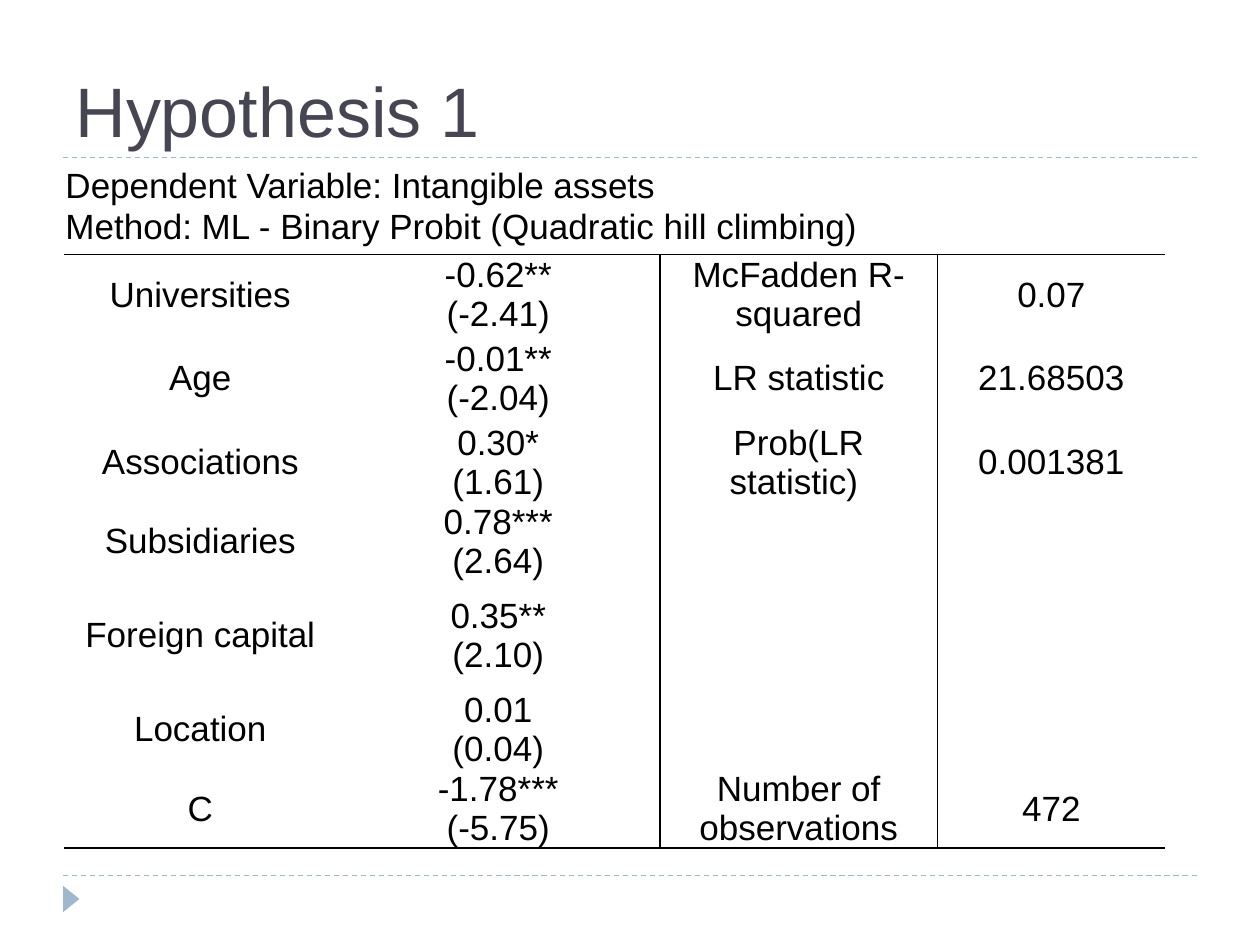
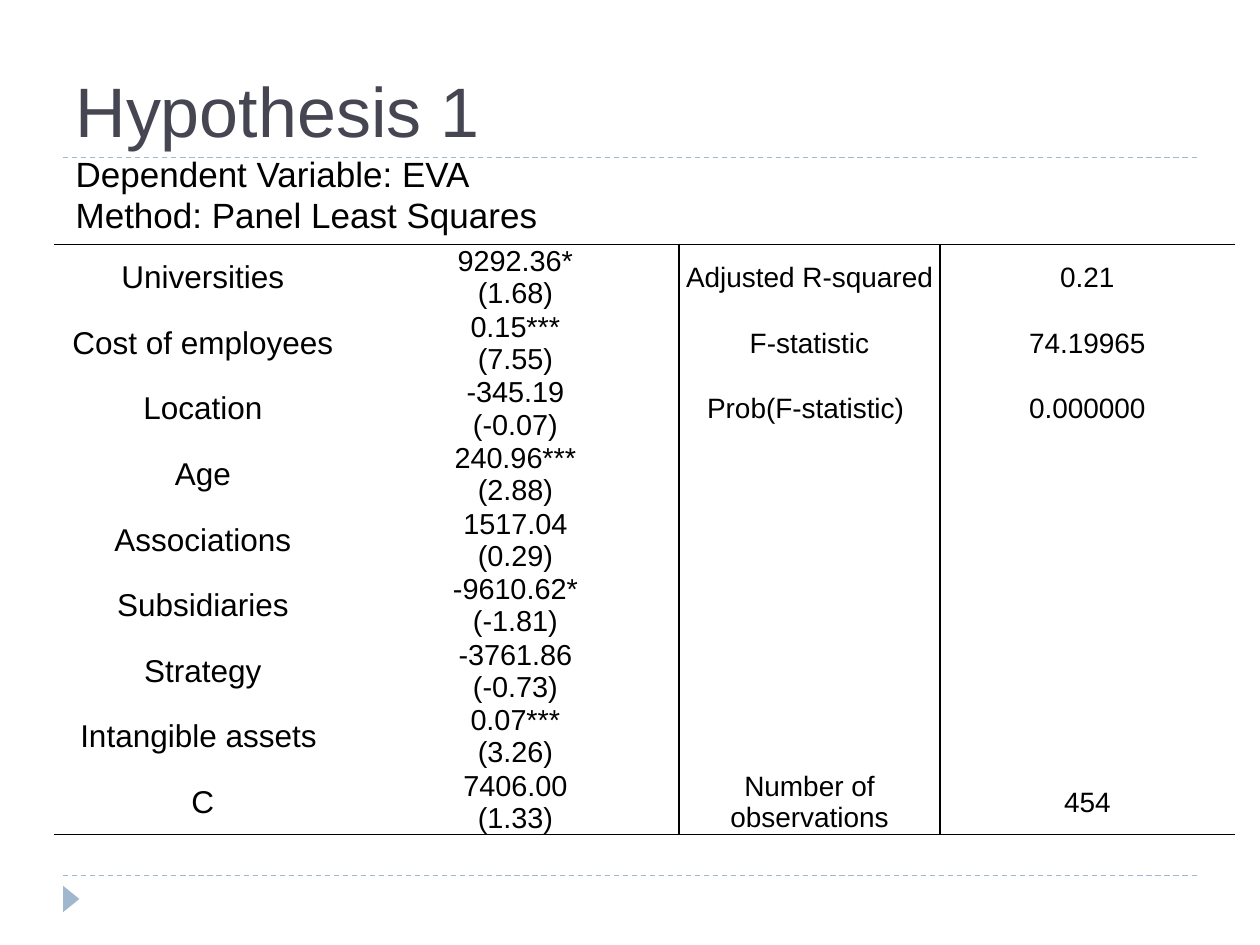
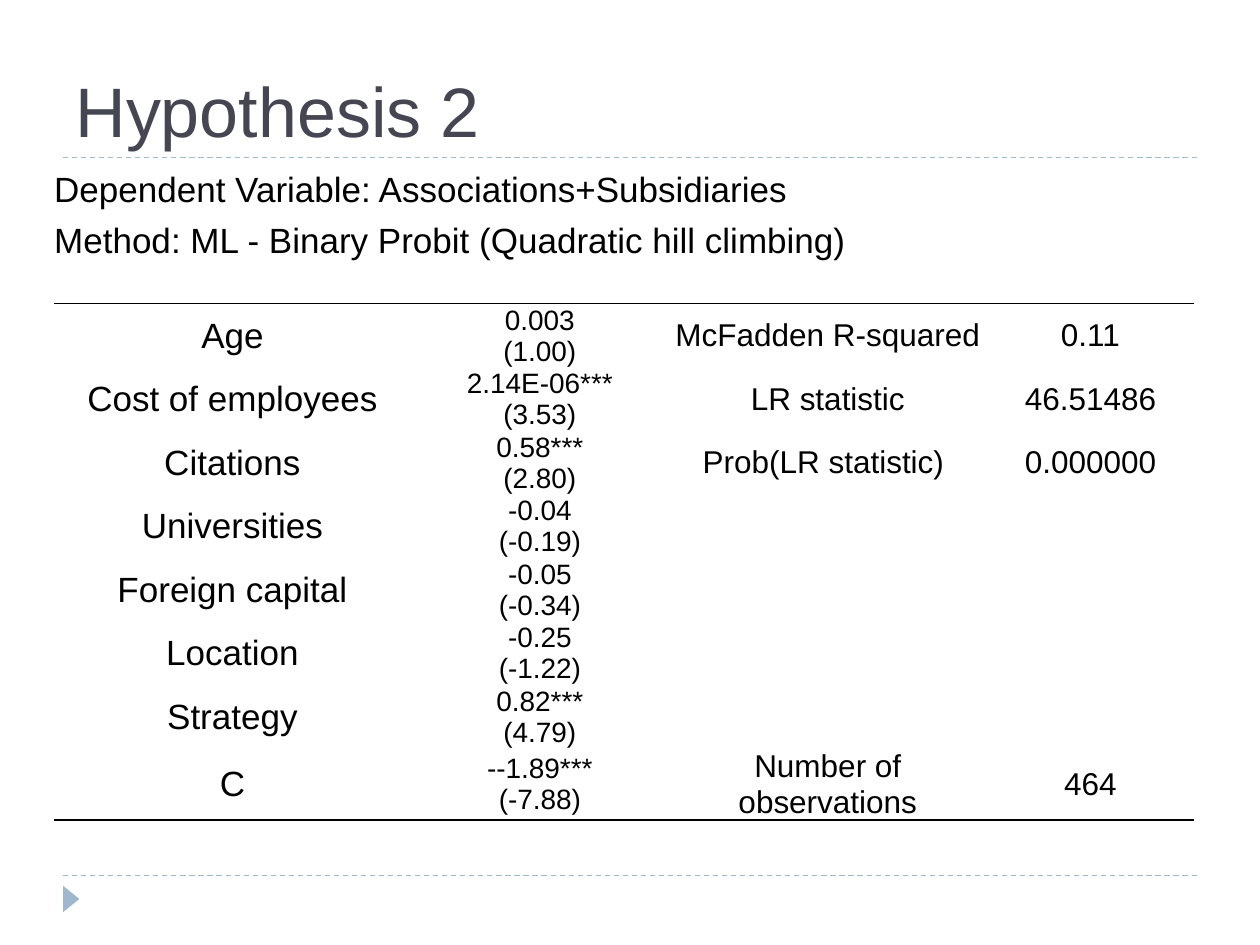
from dataclasses import dataclass

from lxml import etree
from pptx import Presentation
from pptx.dml.color import RGBColor
from pptx.enum.dml import MSO_LINE
from pptx.enum.shapes import MSO_CONNECTOR, MSO_SHAPE
from pptx.enum.text import MSO_ANCHOR, MSO_AUTO_SIZE, PP_ALIGN
from pptx.oxml.ns import qn
from pptx.slide import Slide
from pptx.table import Table, _Cell
from pptx.util import Pt

DASH = MSO_LINE.DASH
STRAIGHT = MSO_CONNECTOR.STRAIGHT
TRIANGLE = MSO_SHAPE.ISOSCELES_TRIANGLE
MIDDLE, BOTTOM = MSO_ANCHOR.MIDDLE, MSO_ANCHOR.BOTTOM
LEFT, CENTER = PP_ALIGN.LEFT, PP_ALIGN.CENTER
NO_AUTOFIT = MSO_AUTO_SIZE.NONE

COLORS = {"title": "464653", "text": "000000", "accent": "9FB8CD"}
FONT = "Arial"
TITLE_SIZE = 40
HEADING_SIZE = 20
RULE_LEFT, RULE_RIGHT = 36, 684
RULE_TOPS = (500.4, 90)
TITLE_BOX = (36, 12.24, 648, 77.76)
MARKER_BOX = (33.12, 509.04, 15.12, 9.36)
BORDER_TAGS = {"l": "a:lnL", "r": "a:lnR", "t": "a:lnT", "b": "a:lnB"}
TIGHT, ROOMY = 0.72, 3.6


@dataclass(frozen=True)
class Grid:
    left: float
    top: float
    height: float
    columns: tuple[float, ...]
    rows: tuple[float, ...]


@dataclass(frozen=True)
class Heading:
    grid: Grid
    lines: tuple[str, str]
    merged_row: int | None = None
    inset: float = TIGHT
    first_spacing: float | None = None


@dataclass(frozen=True)
class Regression:
    title: str
    heading: Heading
    grid: Grid
    sizes: tuple[float, ...]
    ruled: bool
    estimates: tuple[tuple[str, str, str], ...]
    fit: tuple[tuple[str, str], ...]
    observations: str


REGRESSIONS = (
    Regression(
        "Hypothesis 1",
        Heading(
            Grid(36.72, 88.56, 51.84, (453.6, 113.04), (27.36, 18)),
            ("Dependent Variable: Intangible assets",
             "Method: ML - Binary Probit (Quadratic hill climbing)"),
            merged_row=1,
        ),
        Grid(36.72, 145.44, 356.4, (155.52, 185.04, 158.4, 130.32),
             (35.28, 50.4, 35.28, 35.28, 61.92, 33.84, 30.96)),
        (20, 20, 20, 20),
        True,
        (
            ("Universities", "-0.62**", "(-2.41)"),
            ("Age", "-0.01**", "(-2.04)"),
            ("Associations", "0.30*", "(1.61)"),
            ("Subsidiaries", "0.78***", "(2.64)"),
            ("Foreign capital", "0.35**", "(2.10)"),
            ("Location", "0.01", "(0.04)"),
            ("C", "-1.78***", "(-5.75)"),
        ),
        (("McFadden R-squared", "0.07"), ("LR statistic", "21.68503"),
         ("Prob(LR statistic) ", "0.001381")),
        "472",
    ),
    Regression(
        "Hypothesis 1",
        Heading(
            Grid(42.48, 88.56, 49.68, (357.12,), (19.44, 20.16)),
            ("Dependent Variable: EVA", "Method: Panel Least Squares"),
        ),
        Grid(30.96, 139.68, 362.88, (169.92, 187.2, 149.04, 168.48),
             (15.12, 24.48, 24.48, 15.12, 24.48, 24.48, 24.48, 24.48, 15.12)),
        (18, 16.5, 16, 16),
        True,
        (
            ("Universities", "9292.36*", "(1.68)"),
            ("Cost of employees", "0.15***", "(7.55)"),
            ("Location", "-345.19", "(-0.07)"),
            ("Age", "240.96***", "(2.88)"),
            ("Associations", "1517.04", "(0.29)"),
            ("Subsidiaries", "-9610.62*", "(-1.81)"),
            ("Strategy", "-3761.86", "(-0.73)"),
            ("Intangible assets ", "0.07***", "(3.26)"),
            ("C", "7406.00", "(1.33)"),
        ),
        (("Adjusted R-squared", "0.21"), ("F-statistic", "74.19965"),
         ("Prob(F-statistic) ", "0.000000")),
        "454",
    ),
    Regression(
        "Hypothesis 2",
        Heading(
            Grid(30.96, 94.32, 53.28, (589.68, 54), (23.04, 28.08)),
            ("Dependent Variable: Associations+Subsidiaries",
             "Method: ML - Binary Probit (Quadratic hill climbing)"),
            merged_row=0,
            inset=0,
            first_spacing=1.15,
        ),
        Grid(30.96, 173.52, 321.84, (203.76, 147.6, 181.44, 118.8), (32.4,) * 8),
        (20, 16, 18, 18),
        False,
        (
            ("Age", "0.003", "(1.00)"),
            ("Cost of employees", "2.14E-06***", "(3.53)"),
            ("Citations", "0.58***", "(2.80)"),
            ("Universities", "-0.04", "(-0.19)"),
            ("Foreign capital", "-0.05", "(-0.34)"),
            ("Location", "-0.25", "(-1.22)"),
            ("Strategy", "0.82***", "(4.79)"),
            ("C", "--1.89***", "(-7.88)"),
        ),
        (("McFadden R-squared", "0.11"), ("LR statistic", "46.51486"),
         ("Prob(LR statistic) ", "0.000000")),
        "464",
    ),
)


def rgb(role: str) -> RGBColor:
    return RGBColor.from_string(COLORS[role])


def add_run(paragraph, text: str, size: float, role: str) -> None:
    run = paragraph.add_run()
    run.text = text
    run.font.name = FONT
    run.font.size = Pt(size)
    run.font.color.rgb = rgb(role)


def add_rule(slide: Slide, top: float) -> None:
    rule = slide.shapes.add_connector(
        STRAIGHT, Pt(RULE_LEFT), Pt(top), Pt(RULE_RIGHT), Pt(top))
    rule.line.color.rgb = rgb("accent")
    rule.line.width = Pt(0.75)
    rule.line.dash_style = DASH
    etree.SubElement(rule._element.spPr, qn("a:effectLst"))


def add_frame(slide: Slide, title: str) -> None:
    for top in RULE_TOPS:
        add_rule(slide, top)
    marker = slide.shapes.add_shape(TRIANGLE, *map(Pt, MARKER_BOX))
    marker.rotation = 90
    marker.shadow.inherit = False
    marker.fill.solid()
    marker.fill.fore_color.rgb = rgb("accent")
    marker.line.fill.background()

    heading = slide.shapes.title
    heading.left, heading.top, heading.width, heading.height = map(Pt, TITLE_BOX)
    frame = heading.text_frame
    frame.auto_size = NO_AUTOFIT
    frame.vertical_anchor = BOTTOM
    frame.paragraphs[0].alignment = LEFT
    add_run(frame.paragraphs[0], title, TITLE_SIZE, "title")


def style_cell(cell: _Cell, edges: str) -> None:
    properties = cell._tc.get_or_add_tcPr()
    for edge, tag in BORDER_TAGS.items():
        border = etree.SubElement(properties, qn(tag), w=str(Pt(1)))
        if edge in edges:
            fill = etree.SubElement(border, qn("a:solidFill"))
            etree.SubElement(fill, qn("a:srgbClr"), val=COLORS["text"])
        else:
            etree.SubElement(border, qn("a:noFill"))
    cell.fill.background()


def fill_cell(cell: _Cell, lines: tuple[str, ...], size: float, side: float,
              top: float, anchor: MSO_ANCHOR, alignment: PP_ALIGN) -> None:
    cell.margin_left = cell.margin_right = Pt(side)
    cell.margin_top, cell.margin_bottom = Pt(top), Pt(0)
    cell.vertical_anchor = anchor
    frame = cell.text_frame
    for index, line in enumerate(lines):
        paragraph = frame.add_paragraph() if index else frame.paragraphs[0]
        paragraph.alignment = alignment
        add_run(paragraph, line, size, "text")


def add_grid(slide: Slide, grid: Grid) -> Table:
    holder = slide.shapes.add_table(
        len(grid.rows), len(grid.columns), Pt(grid.left), Pt(grid.top),
        Pt(sum(grid.columns)), Pt(grid.height))
    table = holder.table
    table.first_row = table.horz_banding = False
    for column, width in zip(table.columns, grid.columns):
        column.width = Pt(width)
    for row, height in zip(table.rows, grid.rows):
        row.height = Pt(height)
    holder.height = Pt(grid.height)
    return table


def result_edges(row: int, column: int, last_row: int, ruled: bool) -> str:
    edges = "t" if row == 0 else ""
    if row == last_row:
        edges += "b"
    if ruled:
        edges += ("", "r", "lr", "l")[column]
    return edges


def add_results(slide: Slide, regression: Regression) -> None:
    table = add_grid(slide, regression.grid)
    last_row = len(regression.estimates) - 1
    statistics = dict(enumerate(regression.fit))
    statistics[last_row] = ("Number of observations", regression.observations)
    for row, (variable, *estimate) in enumerate(regression.estimates):
        name, value = statistics.get(row, ("", ""))
        contents = ((variable,), tuple(estimate), (name,), (value,))
        for column, lines in enumerate(contents):
            cell = table.cell(row, column)
            style_cell(cell, result_edges(row, column, last_row, regression.ruled))
            if any(lines):
                side = ROOMY if column == 2 else TIGHT
                fill_cell(cell, lines, regression.sizes[column], side, TIGHT,
                          MIDDLE, CENTER)


def add_heading(slide: Slide, heading: Heading) -> None:
    table = add_grid(slide, heading.grid)
    for cell in table.iter_cells():
        style_cell(cell, "")
    if heading.merged_row is not None:
        row = heading.merged_row
        table.cell(row, 0).merge(table.cell(row, 1))
    for row, line in enumerate(heading.lines):
        fill_cell(table.cell(row, 0), (line,), HEADING_SIZE, heading.inset,
                  heading.inset, BOTTOM, LEFT)
    if heading.first_spacing:
        first_line = table.cell(0, 0).text_frame.paragraphs[0]
        first_line.line_spacing = heading.first_spacing


def main() -> None:
    deck = Presentation()
    deck.slide_width, deck.slide_height = Pt(720), Pt(540)
    title_only = deck.slide_layouts[5]
    for regression in REGRESSIONS:
        slide = deck.slides.add_slide(title_only)
        add_frame(slide, regression.title)
        add_results(slide, regression)
        add_heading(slide, regression.heading)
    deck.save("out.pptx")


if __name__ == "__main__":
    main()
